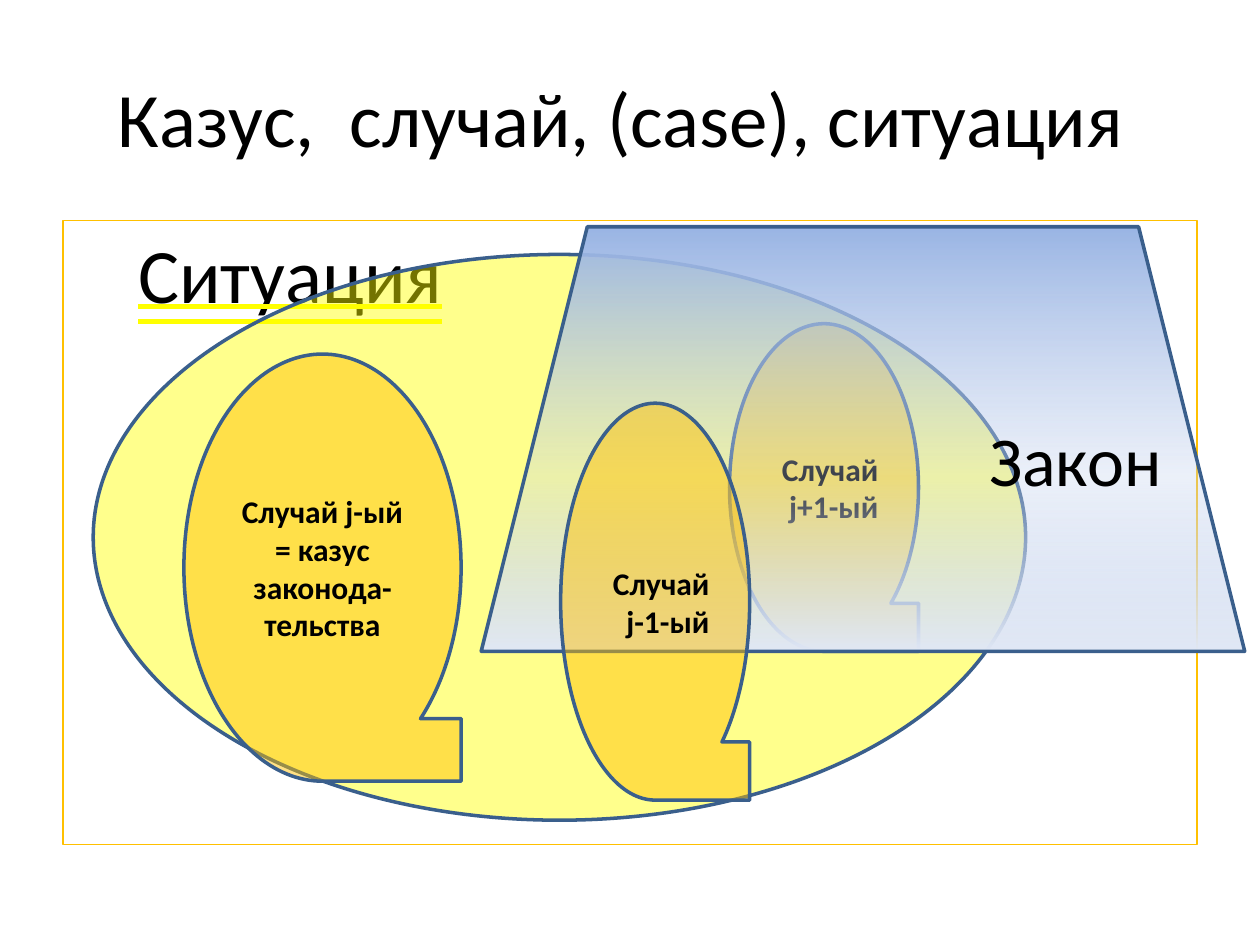
from lxml import etree
from pptx import Presentation
from pptx.dml.color import RGBColor
from pptx.enum.shapes import MSO_SHAPE
from pptx.enum.text import MSO_ANCHOR, MSO_UNDERLINE, PP_ALIGN
from pptx.oxml import parse_xml
from pptx.oxml.ns import qn
from pptx.util import Pt

RECTANGLE, ELLIPSE = MSO_SHAPE.RECTANGLE, MSO_SHAPE.OVAL
TRAPEZOID, TAPE = MSO_SHAPE.TRAPEZOID, MSO_SHAPE.FLOWCHART_SEQUENTIAL_ACCESS_STORAGE
TOP, MIDDLE = MSO_ANCHOR.TOP, MSO_ANCHOR.MIDDLE
LEFT, CENTER, RIGHT = PP_ALIGN.LEFT, PP_ALIGN.CENTER, PP_ALIGN.RIGHT
DOUBLE_UNDERLINE = MSO_UNDERLINE.DOUBLE_LINE

DRAWING_NAMESPACE = "http://schemas.openxmlformats.org/drawingml/2006/main"
FONT = "Calibri"
BLACK, YELLOW, AMBER, BLUE = "000000", "FFFF00", "FFC000", "3A5F8C"


def color(hex_string):
    return RGBColor.from_string(hex_string)


def add_text(shape, text, size, align=CENTER, anchor=MIDDLE, bold=False):
    frame = shape.text_frame
    frame.word_wrap = True
    frame.vertical_anchor = anchor
    paragraph = frame.paragraphs[0]
    paragraph.alignment = align
    run = paragraph.add_run()
    run.text = text
    run.font.name = FONT
    run.font.size = Pt(size)
    run.font.bold = bold
    run.font.color.rgb = color(BLACK)
    return paragraph


def add_outlined_shape(slide, kind, box, line=BLUE, width=2):
    shape = slide.shapes.add_shape(kind, *map(Pt, box))
    shape.shadow.inherit = False
    shape.fill.background()
    shape.line.color.rgb = color(line)
    shape.line.width = Pt(width)
    return shape


def fill_translucent(shape, hex_string, opacity):
    shape.fill.solid()
    shape.fill.fore_color.rgb = color(hex_string)
    fill_color = shape._element.spPr.find(qn("a:solidFill"))[0]
    etree.SubElement(fill_color, qn("a:alpha"), val=str(opacity * 1000))


def fill_gradient_down(shape, stops):
    """Fill from top to bottom; each stop is position, colour and opacity in percent."""
    stop_xml = "".join(
        f'<a:gs pos="{position * 1000}"><a:srgbClr val="{hex_string}">'
        f'<a:alpha val="{opacity * 1000}"/></a:srgbClr></a:gs>'
        for position, hex_string, opacity in stops)
    gradient = parse_xml(
        f'<a:gradFill xmlns:a="{DRAWING_NAMESPACE}" rotWithShape="1">'
        f'<a:gsLst>{stop_xml}</a:gsLst><a:lin ang="5400000" scaled="0"/></a:gradFill>')
    properties = shape._element.spPr
    properties.replace(properties.find(qn("a:noFill")), gradient)


def underline_double(run, hex_string):
    run.font.underline = DOUBLE_UNDERLINE
    underline = parse_xml(
        f'<a:uFill xmlns:a="{DRAWING_NAMESPACE}"><a:solidFill>'
        f'<a:srgbClr val="{hex_string}"/></a:solidFill></a:uFill>')
    run.font._element.find(qn("a:latin")).addprevious(underline)


def add_title(slide, text):
    title = slide.shapes.add_textbox(Pt(36), Pt(21.6), Pt(648), Pt(90))
    add_text(title, text, 44)


def add_situation_frame(slide):
    frame = add_outlined_shape(slide, RECTANGLE, (36, 126, 648, 356.4), AMBER, 0.75)
    paragraph = add_text(frame, "Ситуация", 44, LEFT, TOP)
    paragraph._p.get_or_add_pPr().set("marL", str(Pt(36)))
    underline_double(paragraph.runs[0], YELLOW)


def add_situation_ellipse(slide):
    ellipse = add_outlined_shape(slide, ELLIPSE, (53.3, 145.4, 532.8, 323.3))
    fill_translucent(ellipse, YELLOW, 45)


def add_case(slide, box, text, align=RIGHT):
    case = add_outlined_shape(slide, TAPE, box)
    fill_translucent(case, AMBER, 48)
    add_text(case, text, 18, align, bold=True)


def add_law(slide):
    law = add_outlined_shape(slide, TRAPEZOID, (275, 129.6, 436.3, 242.6))
    fill_gradient_down(law, [(0, "9AB5E4", 100), (59, "C2D1ED", 31), (100, "E1E8F5", 100)])
    add_text(law, "Закон", 40, RIGHT)


def main():
    presentation = Presentation()
    presentation.slide_width, presentation.slide_height = Pt(720), Pt(540)
    slide = presentation.slides.add_slide(presentation.slide_layouts[6])
    add_title(slide, "Казус,  случай, (case), ситуация ")
    add_situation_frame(slide)
    add_situation_ellipse(slide)
    add_case(slide, (416.9, 185, 108, 187.2), "Случай j+1-ый")
    add_case(slide, (105.1, 202.3, 158.4, 244.1),
             "Случай j-ый = казус законода-тельства", CENTER)
    add_law(slide)
    add_case(slide, (320.4, 230.4, 108, 226.8), "Случай j-1-ый")
    presentation.save("out.pptx")


if __name__ == "__main__":
    main()
